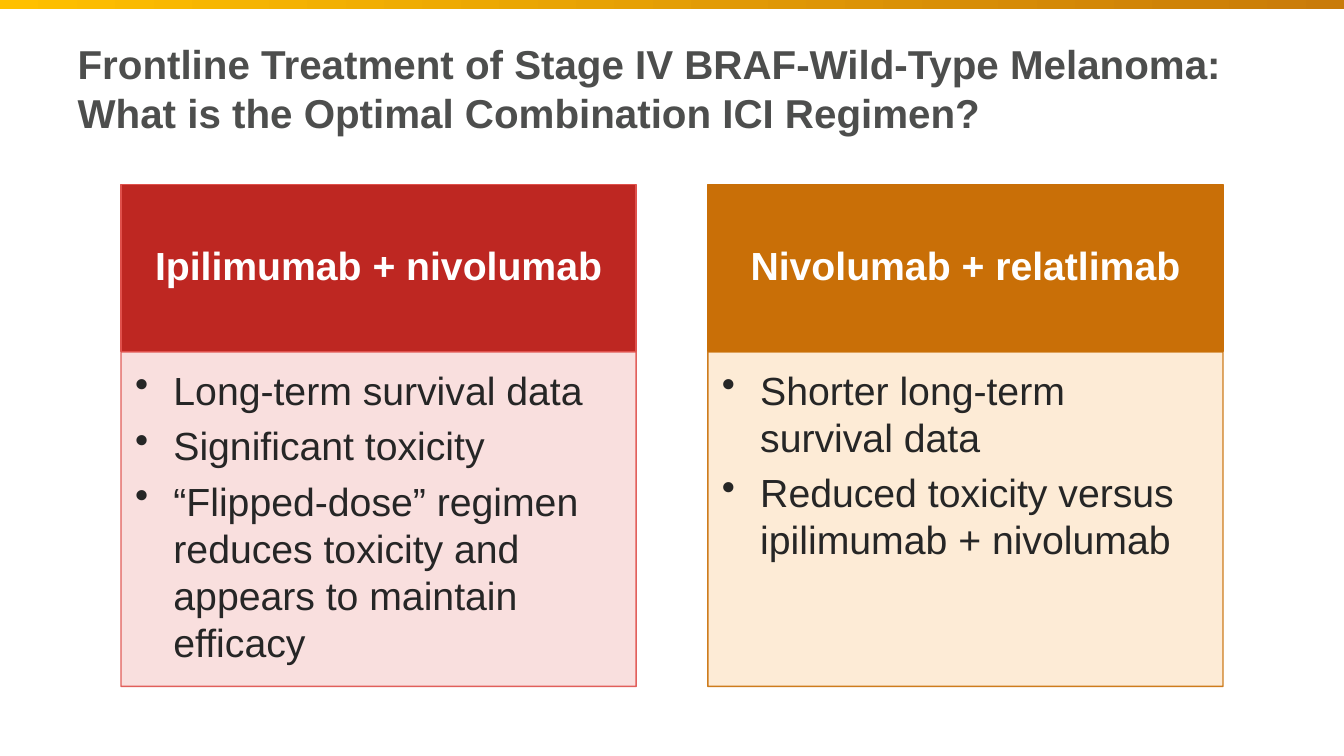
"""Build a slide comparing two frontline combination ICI regimens."""
from pptx import Presentation
from pptx.dml.color import RGBColor
from pptx.enum.shapes import MSO_SHAPE
from pptx.enum.text import MSO_ANCHOR, MSO_AUTO_SIZE, PP_ALIGN
from pptx.oxml.ns import qn
from pptx.util import Inches, Pt

RECTANGLE = MSO_SHAPE.RECTANGLE
TOP, MIDDLE = MSO_ANCHOR.TOP, MSO_ANCHOR.MIDDLE
LEFT, CENTER = PP_ALIGN.LEFT, PP_ALIGN.CENTER
NO_AUTOFIT = MSO_AUTO_SIZE.NONE

TITLE = ("Frontline Treatment of Stage IV BRAF-Wild-Type Melanoma: "
         "What is the Optimal Combination ICI Regimen?")
REGIMENS = [
    ("Ipilimumab + nivolumab", "red",
     ["Long-term survival data",
      "Significant toxicity",
      "“Flipped-dose” regimen reduces toxicity and appears to maintain efficacy"]),
    ("Nivolumab + relatlimab", "orange",
     ["Shorter long-term survival data",
      "Reduced toxicity versus ipilimumab + nivolumab"]),
]
COLORS = {
    "title": "4D4E4D", "white": "FFFFFF", "body": "262626",
    "band_start": "FFC000", "band_end": "C97B09",
    "red": "BE2722", "red_line": "DF504B", "red_tint": "F9DCDB",
    "orange": "C96F07", "orange_line": "C96F07", "orange_tint": "FDE9D2",
}
FONT = "Arial"
SLIDE_W, SLIDE_H = 13.33, 7.5
BAND_H = 0.09
CARD_LEFT, CARD_TOP, CARD_W, CARD_GAP = 1.2, 1.83, 5.11, 0.71
HEADER_H, POINTS_H = 1.66, 3.32
HEADER_INSETS = (0.19, 0.11, 0.19, 0.11)
POINTS_INSETS = (0.14, 0.14, 0.19, 0.21)
BULLET_INDENT = 0.38


def rgb(name):
    return RGBColor.from_string(COLORS[name])


def style_text(paragraph, size, color, bold, align):
    paragraph.alignment = align
    for run in paragraph.runs:
        run.font.name = FONT
        run.font.size = Pt(size)
        run.font.bold = bold
        run.font.color.rgb = rgb(color)


def add_panel(slide, left, top, height, fill, line, lines, insets, anchor):
    panel = slide.shapes.add_shape(
        RECTANGLE, Inches(left), Inches(top), Inches(CARD_W), Inches(height))
    panel.shadow.inherit = False
    panel.fill.solid()
    panel.fill.fore_color.rgb = rgb(fill)
    panel.line.color.rgb = rgb(line)
    panel.line.width = Pt(1)
    frame = panel.text_frame
    frame.text = "\n".join(lines)
    frame.word_wrap = True
    frame.vertical_anchor = anchor
    (frame.margin_left, frame.margin_top,
     frame.margin_right, frame.margin_bottom) = map(Inches, insets)
    return panel


def add_bullet(paragraph):
    properties = paragraph._p.get_or_add_pPr()
    properties.set("marL", str(Inches(BULLET_INDENT)))
    properties.set("indent", str(-Inches(BULLET_INDENT)))
    bullet = properties.makeelement(qn("a:buChar"), {"char": "•"})
    properties.append(bullet)


def make_translucent(panel, percent):
    for color in list(panel.element.spPr.iter(qn("a:srgbClr"))):
        color.append(color.makeelement(qn("a:alpha"), {"val": str(percent * 1000)}))


def add_regimen(slide, left, name, hue, points):
    header = add_panel(slide, left, CARD_TOP, HEADER_H, hue, hue + "_line",
                       [name], HEADER_INSETS, MIDDLE)
    heading = header.text_frame.paragraphs[0]
    heading.line_spacing = 0.9
    style_text(heading, 28, "white", True, CENTER)

    details = add_panel(slide, left, CARD_TOP + HEADER_H, POINTS_H, hue + "_tint",
                        hue + "_line", points, POINTS_INSETS, TOP)
    make_translucent(details, 90)
    for point in details.text_frame.paragraphs:
        point.level = 1
        point.space_after = Pt(6)
        style_text(point, 28, "body", False, LEFT)
        add_bullet(point)


def add_band(slide):
    band = slide.shapes.add_shape(RECTANGLE, 0, 0, Inches(SLIDE_W), Inches(BAND_H))
    band.shadow.inherit = False
    band.line.fill.background()
    band.fill.gradient()
    band.fill.gradient_angle = 0
    for stop, color in zip(band.fill.gradient_stops, ("band_start", "band_end")):
        stop.color.rgb = rgb(color)


def add_title(slide):
    title = slide.shapes.title
    title.left, title.top = Inches(0.67), Inches(0.22)
    title.width, title.height = Inches(11.75), Inches(1.3)
    frame = title.text_frame
    frame.text = TITLE
    frame.word_wrap = True
    frame.auto_size = NO_AUTOFIT
    frame.vertical_anchor = MIDDLE
    style_text(frame.paragraphs[0], 28.8, "title", True, LEFT)


def main():
    deck = Presentation()
    deck.slide_width, deck.slide_height = Inches(SLIDE_W), Inches(SLIDE_H)
    slide = deck.slides.add_slide(deck.slide_layouts.get_by_name("Title Only"))
    add_band(slide)
    add_title(slide)
    for column, (name, hue, points) in enumerate(REGIMENS):
        left = CARD_LEFT + column * (CARD_W + CARD_GAP)
        add_regimen(slide, left, name, hue, points)
    deck.save("out.pptx")


if __name__ == "__main__":
    main()
